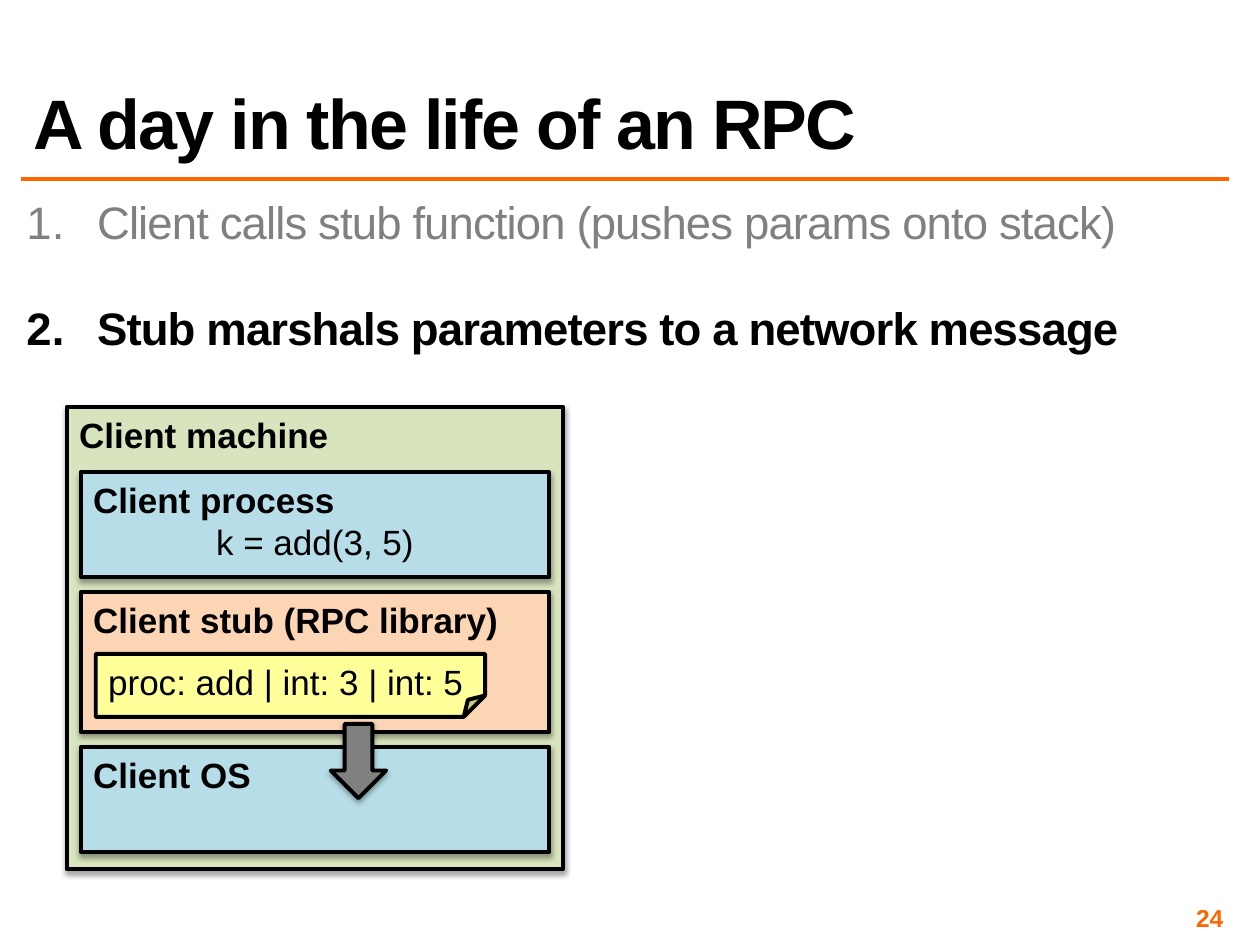
from dataclasses import dataclass

from lxml import etree
from pptx import Presentation
from pptx import util as u
from pptx.dml import color
from pptx.enum import shapes, text
from pptx.oxml import ns


@dataclass(frozen=True)
class Theme:
    """Colours, type sizes and line widths of the deck."""
    font: str = "Arial"
    ink: str = "000000"
    muted: str = "808080"
    accent: str = "FF6600"
    machine: str = "D7E4BD"
    layer: str = "B7DEE8"
    stub: str = "FCD5B5"
    note: str = "FFFF99"
    title_size: int = 40
    step_size: int = 26
    label_size: int = 20
    number_size: int = 14
    outline: float = 2.25
    rule: float = 2


THEME = Theme()


def rgb(value):
    """Turn a hex string into a colour."""
    return color.RGBColor.from_string(value)


def add_child(parent, tag, **attributes):
    """Append a DrawingML element to a parent."""
    values = {key: str(value) for key, value in attributes.items()}
    return etree.SubElement(parent, ns.qn(tag), values)


def style(para, size, ink=THEME.ink, bold=False, tracking=0):
    """Format every run of a paragraph."""
    for span in para.runs:
        span.font.name = THEME.font
        span.font.size = u.Pt(size)
        span.font.bold = bold
        span.font.color.rgb = rgb(ink)
        if tracking:
            span.font._element.set("spc", str(int(tracking * 100)))


def add_text_box(page, box, inset=None):
    """Add a wrapping text box and return its frame."""
    frame = page.shapes.add_textbox(*map(u.Inches, box)).text_frame
    frame.word_wrap = True
    if inset is not None:
        frame.margin_left = frame.margin_right = u.Inches(inset)
        frame.margin_top = frame.margin_bottom = u.Inches(inset)
    return frame


def add_title(page, box, wording):
    """Place the title with the rule below it."""
    frame = add_text_box(page, box)
    frame.vertical_anchor = text.MSO_ANCHOR.BOTTOM
    frame.text = wording
    para = frame.paragraphs[0]
    para.line_spacing = 0.8
    style(para, THEME.title_size, bold=True, tracking=-1)

    left, top, width, height = box
    level = u.Inches(top + height + 0.08)
    rule = page.shapes.add_connector(shapes.MSO_CONNECTOR.STRAIGHT, u.Inches(left), level,
                                     u.Inches(left + width), level)
    rule.line.color.rgb = rgb(THEME.accent)
    rule.line.width = u.Pt(THEME.rule)
    add_child(rule._element.spPr, "a:effectLst")


def add_steps(page, box, steps, current):
    """Place the numbered steps, with the current one in bold."""
    frame = add_text_box(page, box, inset=0.04)
    frame.text = "\n".join(steps)
    for index, para in enumerate(frame.paragraphs):
        active = index == current
        para.line_spacing = 0.8
        para.space_before = u.Pt(36 if index else 5)
        style(para, THEME.step_size, THEME.ink if active else THEME.muted, active, -0.5)
        properties = para._p.get_or_add_pPr()
        properties.set("marL", str(u.Inches(0.56)))
        properties.set("indent", str(u.Inches(-0.56)))
        add_child(properties, "a:buFont", typeface="+mj-lt")
        add_child(properties, "a:buAutoNum", type="arabicPeriod")


def add_block(page, kind, box, fill, shadow=True):
    """Add an outlined shape, with a soft shadow if wanted."""
    block = page.shapes.add_shape(kind, *map(u.Inches, box))
    block.fill.solid()
    block.fill.fore_color.rgb = rgb(fill)
    block.line.color.rgb = rgb(THEME.ink)
    block.line.width = u.Pt(THEME.outline)
    block.shadow.inherit = False
    if shadow:
        effects = block._element.spPr.find(ns.qn("a:effectLst"))
        outer = add_child(effects, "a:outerShdw", blurRad=u.Pt(3.1), dist=u.Pt(1.8),
                          dir=90 * 60000, rotWithShape=0)
        add_child(add_child(outer, "a:srgbClr", val=THEME.ink), "a:alpha", val=35000)
    return block


def add_labelled_box(page, box, fill, label, detail=None):
    """Add a rectangle with a bold label and an optional centred detail."""
    frame = add_block(page, shapes.MSO_SHAPE.RECTANGLE, box, fill).text_frame
    frame.vertical_anchor = text.MSO_ANCHOR.TOP
    frame.text = label
    frame.paragraphs[0].alignment = text.PP_ALIGN.LEFT
    style(frame.paragraphs[0], THEME.label_size, bold=True)
    if detail:
        para = frame.add_paragraph()
        para.text = detail
        para.alignment = text.PP_ALIGN.CENTER
        style(para, THEME.label_size)


def add_message(page, box, wording):
    """Add the folded note that holds the marshalled call."""
    note = add_block(page, shapes.MSO_SHAPE.FOLDED_CORNER, box, THEME.note, shadow=False)
    geometry = note._element.spPr.find(ns.qn("a:prstGeom"))
    guides = geometry.find(ns.qn("a:avLst"))
    if guides is None:
        guides = add_child(geometry, "a:avLst")
    add_child(guides, "a:gd", name="adj", fmla="val 34000")
    frame = note.text_frame
    frame.vertical_anchor = text.MSO_ANCHOR.TOP
    frame.auto_size = text.MSO_AUTO_SIZE.SHAPE_TO_FIT_TEXT
    frame.text = wording
    frame.paragraphs[0].alignment = text.PP_ALIGN.LEFT
    style(frame.paragraphs[0], THEME.label_size)


def add_client_machine(page, box):
    """Stack the client layers inside the machine and send the message down."""
    left, top, width, height = box
    add_labelled_box(page, box, THEME.machine, "Client machine")

    layers = [
        ("Client process", "k = add(3, 5)", THEME.layer, 0.83),
        ("Client stub (RPC library)", None, THEME.stub, 1.11),
        ("Client OS", None, THEME.layer, 0.83),
    ]
    margin, gap = 0.11, 0.12
    layer_top = top + 0.52
    for label, detail, fill, layer_height in layers:
        layer_box = (left + margin, layer_top, width - 2 * margin, layer_height)
        add_labelled_box(page, layer_box, fill, label, detail)
        layer_top += layer_height + gap

    add_message(page, (left + 0.23, top + 1.96, 3.09, 0.5), "proc: add | int: 3 | int: 5")
    arrow = add_block(page, shapes.MSO_SHAPE.RIGHT_ARROW,
                      (left + 2.02, top + 2.59, 0.59, 0.44), THEME.muted)
    arrow.rotation = 90


def add_page_number(page, box, number):
    """Place the page number at the right."""
    frame = add_text_box(page, box, inset=0.04)
    frame.vertical_anchor = text.MSO_ANCHOR.MIDDLE
    frame.text = str(number)
    frame.paragraphs[0].alignment = text.PP_ALIGN.RIGHT
    style(frame.paragraphs[0], THEME.number_size, THEME.accent, bold=True)


def main():
    """Build the deck and save it."""
    deck = Presentation()
    deck.slide_width, deck.slide_height = u.Inches(10), u.Inches(7.5)
    page = deck.slides.add_slide(deck.slide_layouts[6])
    add_title(page, (0.17, 0.17, 9.58, 1.17), "A day in the life of an RPC")
    steps = [
        "Client calls stub function (pushes params onto stack)",
        "Stub marshals parameters to a network message",
    ]
    add_steps(page, (0.17, 1.58, 9.58, 1.4), steps, current=1)
    add_client_machine(page, (0.53, 3.23, 3.94, 3.67))
    add_page_number(page, (7.42, 7.17, 2.33, 0.23), 24)
    deck.save("out.pptx")


if __name__ == "__main__":
    main()
